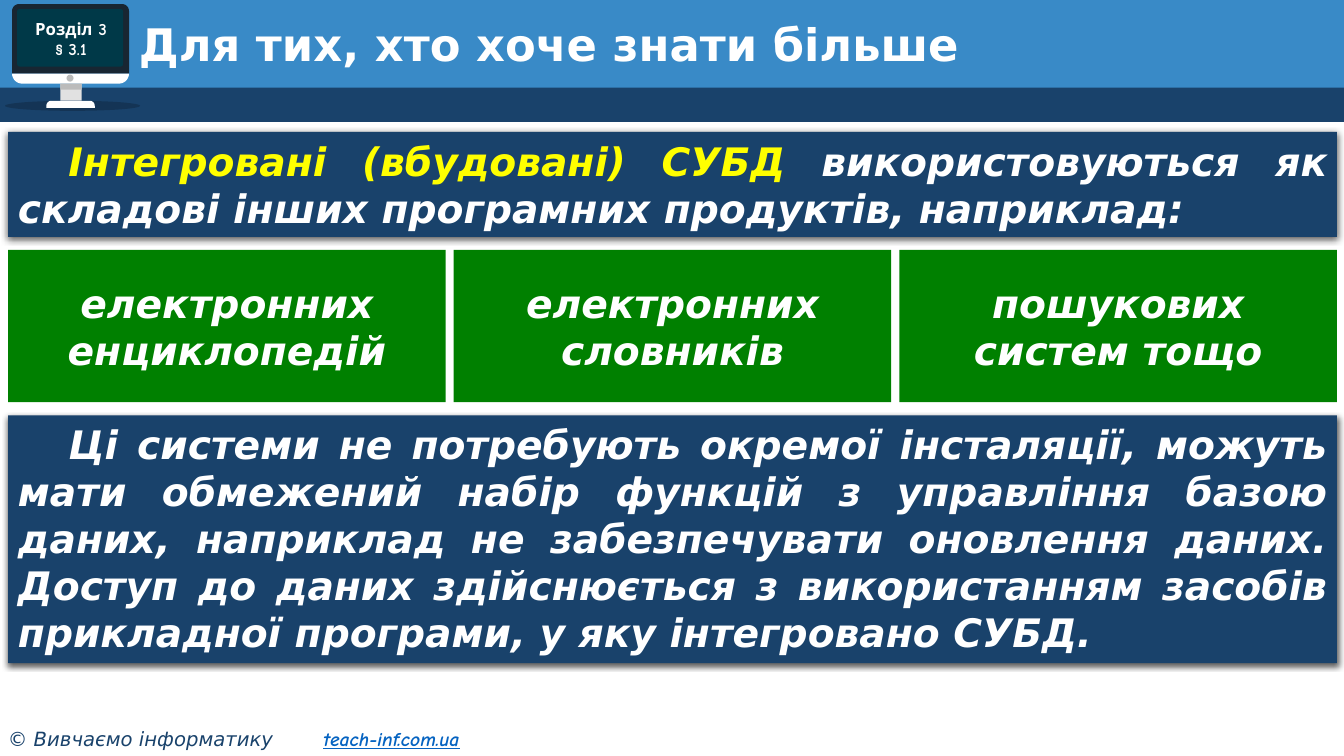
import math
from dataclasses import dataclass

import pptx
import pptx.dml.color
import pptx.enum.shapes
import pptx.enum.text
import pptx.oxml
import pptx.oxml.ns
import pptx.util

Inches = pptx.util.Inches
Pt = pptx.util.Pt
RGBColor = pptx.dml.color.RGBColor
Kind = pptx.enum.shapes.MSO_SHAPE
Align = pptx.enum.text.PP_ALIGN
Anchor = pptx.enum.text.MSO_ANCHOR
AutoSize = pptx.enum.text.MSO_AUTO_SIZE

SKY = RGBColor(0x39, 0x8A, 0xC7)
NAVY = RGBColor(0x19, 0x42, 0x6B)
GREEN = RGBColor(0x00, 0x80, 0x00)
WHITE = RGBColor(0xFF, 0xFF, 0xFF)
BLACK = RGBColor(0x00, 0x00, 0x00)
YELLOW = RGBColor(0xFF, 0xFF, 0x00)
LINK = RGBColor(0x05, 0x63, 0xC1)
CASE = RGBColor(0x18, 0x26, 0x32)
SCREEN = RGBColor(0x00, 0x39, 0x48)
SILVER = RGBColor(0xE1, 0xE1, 0xE1)
GRAY = RGBColor(0xBB, 0xBB, 0xBB)

MAIN_FONT = "DejaVu Sans"
LABEL_FONT = "Comic Neue"
MARGIN, CONTENT_WIDTH = 0.08, 13.18
CARD_WIDTH = 4.34
CARDS = ["електронних енциклопедій", "електронних словників", "пошукових систем тощо"]


@dataclass
class Box:
    left: float
    top: float
    width: float
    height: float

    def lengths(self) -> list:
        return [Inches(v) for v in (self.left, self.top, self.width, self.height)]


@dataclass
class Panel:
    box: Box
    color: RGBColor
    kind: Kind = Kind.RECTANGLE
    adjustment: float | None = None
    opacity: int = 100


@dataclass
class Slab:
    """A bar with two rounded corners, at the top or at the bottom."""
    box: Box
    color: RGBColor
    radius: float
    rounded_top: bool = True


def append_xml(parent, xml: str) -> None:
    namespace = pptx.oxml.ns.nsdecls("a")
    parent.append(pptx.oxml.parse_xml(xml.replace(" ", f" {namespace} ", 1)))


def paint(shape, color: RGBColor) -> None:
    shape.shadow.inherit = False
    shape.fill.solid()
    shape.fill.fore_color.rgb = color
    shape.line.fill.background()


def add_panel(slide, panel: Panel):
    shape = slide.shapes.add_shape(panel.kind, *panel.box.lengths())
    paint(shape, panel.color)
    if panel.adjustment is not None:
        shape.adjustments[0] = panel.adjustment
    if panel.opacity < 100:
        color = shape._element.spPr.find(".//" + pptx.oxml.ns.qn("a:srgbClr"))
        append_xml(color, f'<a:alpha val="{panel.opacity * 1000}"/>')
    return shape


def add_slab(slide, slab: Slab) -> None:
    box, radius = slab.box, slab.radius
    right, bottom = box.left + box.width, box.top + box.height
    flat, edge, turn = (bottom, box.top, 1) if slab.rounded_top else (box.top, bottom, -1)
    points = [(box.left, flat)]
    for center, start in ((box.left + radius, 180), (right - radius, 90)):
        for step in range(0, 91, 10):
            angle = math.radians(start - step)
            points.append((center + radius * math.cos(angle),
                           edge + turn * radius * (1 - math.sin(angle))))
    points.append((right, flat))
    points = [(Inches(x), Inches(y)) for x, y in points]
    builder = slide.shapes.build_freeform(*points[0], scale=1.0)
    builder.add_line_segments(points[1:], close=True)
    paint(builder.convert_to_shape(), slab.color)


def add_soft_shadow(shape) -> None:
    effects = shape._element.spPr.find(pptx.oxml.ns.qn("a:effectLst"))
    append_xml(effects, f'<a:outerShdw blurRad="{Pt(4.5)}" dist="{Pt(1.5)}" dir="5400000" '
                        'rotWithShape="0"><a:srgbClr val="000000"><a:alpha val="63000"/>'
                        '</a:srgbClr></a:outerShdw>')


def add_run(paragraph, text: str, *, size: float = 28, color: RGBColor = WHITE,
            font: str = MAIN_FONT, bold: bool = True, italic: bool = True,
            underline: bool = False) -> None:
    run = paragraph.add_run()
    run.text = text
    run.font.size, run.font.name = Pt(size), font
    run.font.bold, run.font.italic = bold, italic
    run.font.color.rgb = color
    if underline:
        run.font.underline = True


def prepare_frame(shape, anchor: Anchor, grow: bool = False):
    frame = shape.text_frame
    frame.word_wrap = True
    frame.vertical_anchor = anchor
    frame.auto_size = AutoSize.SHAPE_TO_FIT_TEXT if grow else AutoSize.NONE
    return frame


def add_text_box(slide, box: Box, anchor: Anchor, grow: bool = False):
    return prepare_frame(slide.shapes.add_textbox(*box.lengths()), anchor, grow)


def add_statement(slide, top: float, height: float, runs: list[tuple[str, RGBColor]]) -> None:
    shape = add_panel(slide, Panel(Box(MARGIN, top, CONTENT_WIDTH, height), NAVY))
    add_soft_shadow(shape)
    paragraph = prepare_frame(shape, Anchor.TOP, grow=True).paragraphs[0]
    paragraph.alignment = Align.JUSTIFY
    properties = paragraph._p.get_or_add_pPr()
    properties.set("marL", "0")
    properties.set("indent", str(Inches(0.5)))
    for text, color in runs:
        add_run(paragraph, text, color=color)


def add_monitor(slide) -> None:
    parts = [
        Panel(Box(0.05, 1, 1.34, 0.1), BLACK, Kind.OVAL, opacity=20),
        Slab(Box(0.12, 0.04, 1.16, 0.69), CASE, 0.07),
        Slab(Box(0.12, 0.73, 1.16, 0.1), WHITE, 0.1, rounded_top=False),
        Panel(Box(0.6, 0.83, 0.21, 0.17), SILVER),
        Panel(Box(0.6, 0.83, 0.21, 0.06), GRAY),
        Slab(Box(0.46, 1, 0.48, 0.07), WHITE, 0.05),
        Panel(Box(0.66, 0.74, 0.07, 0.07), GRAY, Kind.OVAL),
        Panel(Box(0.17, 0.09, 1.05, 0.57), SCREEN, Kind.ROUNDED_RECTANGLE, 0.04),
    ]
    for part in parts:
        if isinstance(part, Slab):
            add_slab(slide, part)
        else:
            add_panel(slide, part)
    frame = add_text_box(slide, Box(0.13, 0.09, 1.15, 0.59), Anchor.MIDDLE)
    for paragraph, text in ((frame.paragraphs[0], "Розділ 3"), (frame.add_paragraph(), "§ 3.1")):
        paragraph.alignment = Align.CENTER
        add_run(paragraph, text, size=12, font=LABEL_FONT, italic=False)


def add_footer(slide) -> None:
    frame = add_text_box(slide, Box(-0.02, 7.16, 5.23, 0.34), Anchor.TOP, grow=True)
    paragraph = frame.paragraphs[0]
    append_xml(paragraph._p.get_or_add_pPr(),
               f'<a:tabLst ><a:tab pos="{Inches(3.13)}" algn="l"/></a:tabLst>')
    add_run(paragraph, "© Вивчаємо інформатику\t", size=14, color=NAVY, bold=False)
    add_run(paragraph, "teach-inf.com.ua", size=14, color=LINK, font=LABEL_FONT, underline=True)


def main() -> None:
    presentation = pptx.Presentation()
    presentation.slide_width, presentation.slide_height = Inches(13.33), Inches(7.5)
    slide = presentation.slides.add_slide(presentation.slide_layouts[6])

    # Header bands, monitor badge and footer
    add_panel(slide, Panel(Box(0, 0, 13.33, 0.91), SKY))
    add_panel(slide, Panel(Box(0, 0.87, 13.33, 0.34), NAVY))
    add_monitor(slide)
    add_footer(slide)

    # Title
    title = add_text_box(slide, Box(1.28, 0.18, 9.9, 0.58), Anchor.MIDDLE).paragraphs[0]
    title.line_spacing = 0.9
    add_run(title, "Для тих, хто хоче знати більше", size=32, italic=False)

    # Opening statement
    add_statement(slide, 1.31, 1.04, [
        ("Інтегровані (вбудовані) СУБД ", YELLOW),
        ("використовуються як складові інших програмних продуктів, наприклад:", WHITE)])

    # Example cards, spread evenly over the content width
    step = (CONTENT_WIDTH - CARD_WIDTH) / (len(CARDS) - 1)
    for index, text in enumerate(CARDS):
        card = add_panel(slide, Panel(Box(MARGIN + index * step, 2.48, CARD_WIDTH, 1.51), GREEN))
        paragraph = prepare_frame(card, Anchor.MIDDLE).paragraphs[0]
        paragraph.alignment = Align.CENTER
        add_run(paragraph, text)

    # Closing statement
    add_statement(slide, 4.12, 2.46, [(
        "Ці системи не потребують окремої інсталяції, можуть мати обмежений набір функцій "
        "з управління базою даних, наприклад не забезпечувати оновлення даних. Доступ до "
        "даних здійснюється з використанням засобів прикладної програми, у яку інтегровано "
        "СУБД.", WHITE)])

    presentation.save("out.pptx")


if __name__ == "__main__":
    main()
